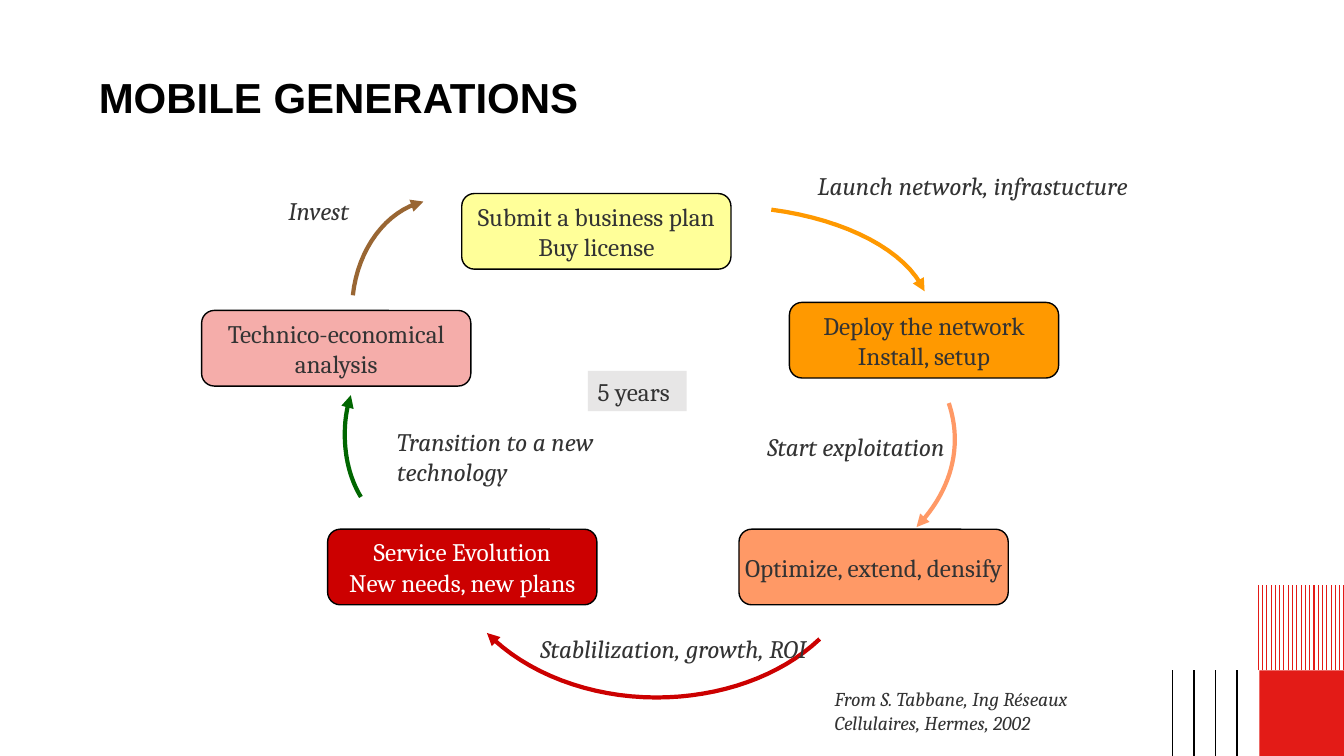
from pptx import Presentation
from pptx import util as u
from pptx.dml import color
from pptx.enum import shapes, text
from pptx.oxml import ns
from lxml import etree

INK = "333333"
RED = "E31B17"
BLACK = "000000"

STAGES = [
    (2, 3.08, "F5ADAA", INK, ["Technico-economical", "analysis"]),
    (4.58, 1.92, "FFFF99", INK, ["Submit a business plan", "Buy license"]),
    (7.83, 3, "FF9900", INK, ["Deploy the network", "Install, setup"]),
    (7.33, 5.25, "FF9966", INK, ["Optimize, extend, densify"]),
    (3.25, 5.25, "CC0000", "FFFFFF", ["Service Evolution", "New needs, new plans"]),
]

TRANSITIONS = [
    ("996633", [(3.5, 2.93), (3.55, 2.47), (3.83, 2.09), (4.2, 2)]),
    ("FF9900", [(7.65, 2.08), (8.4, 2.18), (8.99, 2.49), (9.17, 2.89)]),
    ("FF9966", [(9.41, 4), (9.45, 4.12), (9.47, 4.24), (9.47, 4.36),
                (9.47, 4.67), (9.34, 4.97), (9.09, 5.23)]),
    ("CC0000", [(8.13, 6.34), (7.74, 6.71), (7.14, 6.92), (6.51, 6.92),
                (5.85, 6.92), (5.22, 6.68), (4.83, 6.28)]),
    ("006600", [(3.58, 4.93), (3.47, 4.75), (3.42, 4.53), (3.42, 4.31),
                (3.42, 4.17), (3.44, 4.04), (3.48, 3.92)]),
]

ACTIONS = [
    (2.75, 1.88, 0.92, 0.41, "Invest", False),
    (8, 1.63, 3.7, 0.41, "Launch network, infrastucture", False),
    (7.5, 4.22, 2.21, 0.41, "Start exploitation", False),
    (5.25, 6.22, 3.28, 0.41, "Stablilization, growth, ROI", False),
    (3.83, 4.17, 2.17, 0.72, "Transition to a new technology", True),
]


def rgb(value):
    return color.RGBColor.from_string(value)


def inches(*lengths):
    return [u.Inches(length) for length in lengths]


def write(frame, lines, size=18, font="Cambria", ink=INK, bold=False, italic=False,
          align=text.PP_ALIGN.LEFT, anchor=text.MSO_ANCHOR.TOP, wrap=False,
          inset=(0.11, 0.06), spacing=None):
    frame.word_wrap = wrap
    frame.vertical_anchor = anchor
    frame.margin_left = frame.margin_right = u.Inches(inset[0])
    frame.margin_top = frame.margin_bottom = u.Inches(inset[1])
    for index, line in enumerate(lines):
        paragraph = frame.add_paragraph() if index else frame.paragraphs[0]
        paragraph.alignment = align
        paragraph.line_spacing = spacing
        run = paragraph.add_run()
        run.text = line
        run.font.name, run.font.size = font, u.Pt(size)
        run.font.bold, run.font.italic = bold, italic
        run.font.color.rgb = rgb(ink)


def stroke(line, ink, width):
    line.color.rgb = rgb(ink)
    line.width = u.Pt(width)


def add_label(slide, at, words, fill=None, **style):
    label = slide.shapes.add_textbox(*inches(*at))
    if fill:
        label.fill.solid()
        label.fill.fore_color.rgb = rgb(fill)
    write(label.text_frame, [words], **style)
    label.text_frame.auto_size = text.MSO_AUTO_SIZE.SHAPE_TO_FIT_TEXT


def add_block(slide, kind, at, fill):
    block = slide.shapes.add_shape(kind, *inches(*at))
    block.shadow.inherit = False
    block.fill.solid()
    block.fill.fore_color.rgb = rgb(fill)
    block.line.fill.background()
    return block


def add_stage(slide, left, top, fill, ink, lines):
    stage = add_block(slide, shapes.MSO_SHAPE.ROUNDED_RECTANGLE,
                      (left, top, 2.67, 0.75), fill)
    stroke(stage.line, BLACK, 1)
    write(stage.text_frame, lines, ink=ink, align=text.PP_ALIGN.CENTER,
          anchor=text.MSO_ANCHOR.MIDDLE)


def bezier(controls, t):
    weights = ((1 - t) ** 3, 3 * t * (1 - t) ** 2, 3 * t * t * (1 - t), t ** 3)
    return inches(*(sum(w * point[axis] for w, point in zip(weights, controls))
                    for axis in (0, 1)))


def add_outline(builder, ink, width):
    outline = builder.convert_to_shape()
    outline.shadow.inherit = False
    outline.fill.background()
    stroke(outline.line, ink, width)
    return outline


def add_curved_arrow(slide, ink, controls, steps=16):
    builder = slide.shapes.build_freeform(*inches(*controls[0]))
    for first in range(0, len(controls) - 1, 3):
        section = controls[first:first + 4]
        builder.add_line_segments(
            [bezier(section, step / steps) for step in range(1, steps + 1)], close=False)
    arrow = add_outline(builder, ink, 3)
    line = arrow.element.spPr.find(ns.qn("a:ln"))
    etree.SubElement(line, ns.qn("a:tailEnd"), type="triangle")


def add_hatching(slide, left, top, side, count):
    columns = [left + side * i / (count - 1) for i in range(count)]
    builder = slide.shapes.build_freeform(*inches(left, top + side))
    for x in columns:
        builder.move_to(*inches(x, top + side))
        builder.add_line_segments([inches(x, top)], close=False)
    add_outline(builder, RED, 0.75)


def add_bar(slide, x, top, bottom):
    bar = slide.shapes.add_connector(shapes.MSO_CONNECTOR.STRAIGHT,
                                     *inches(x, top, x, bottom))
    stroke(bar.line, BLACK, 1)
    etree.SubElement(bar.element.spPr, ns.qn("a:effectLst"))


def add_corner(slide):
    add_hatching(slide, 12.48, 5.8, 0.85, 21)
    add_block(slide, shapes.MSO_SHAPE.RECTANGLE, (12.49, 6.65, 0.85, 0.85), RED)
    for i in range(4):
        add_bar(slide, 11.63 + i * 0.64 / 3, 6.65, 7.5)


def add_title(slide, words):
    title = slide.shapes.title
    title.left, title.top, title.width, title.height = inches(0.98, 0.77, 11.38, 1.45)
    write(title.text_frame, [words], size=30, font="Arial", ink=BLACK, bold=True,
          wrap=True, inset=(0, 0), spacing=0.9)


def main():
    deck = Presentation()
    deck.slide_width, deck.slide_height = inches(13.33, 7.5)
    slide = deck.slides.add_slide(deck.slide_layouts[5])
    add_title(slide, "MOBILE GENERATIONS")
    add_corner(slide)
    for stage in STAGES:
        add_stage(slide, *stage)
    for ink, controls in TRANSITIONS:
        add_curved_arrow(slide, ink, controls)
    for *at, words, wrap in ACTIONS:
        add_label(slide, at, words, italic=True, wrap=wrap)
    add_label(slide, (8.18, 6.77, 3.33, 0.57),
              "From S. Tabbane, Ing Réseaux Cellulaires, Hermes, 2002",
              size=14, italic=True, wrap=True, inset=(0.1, 0.05))
    add_label(slide, (5.83, 3.68, 0.98, 0.4), "5 years", fill="E7E6E6", inset=(0.1, 0.05))
    deck.save("out.pptx")


if __name__ == "__main__":
    main()
